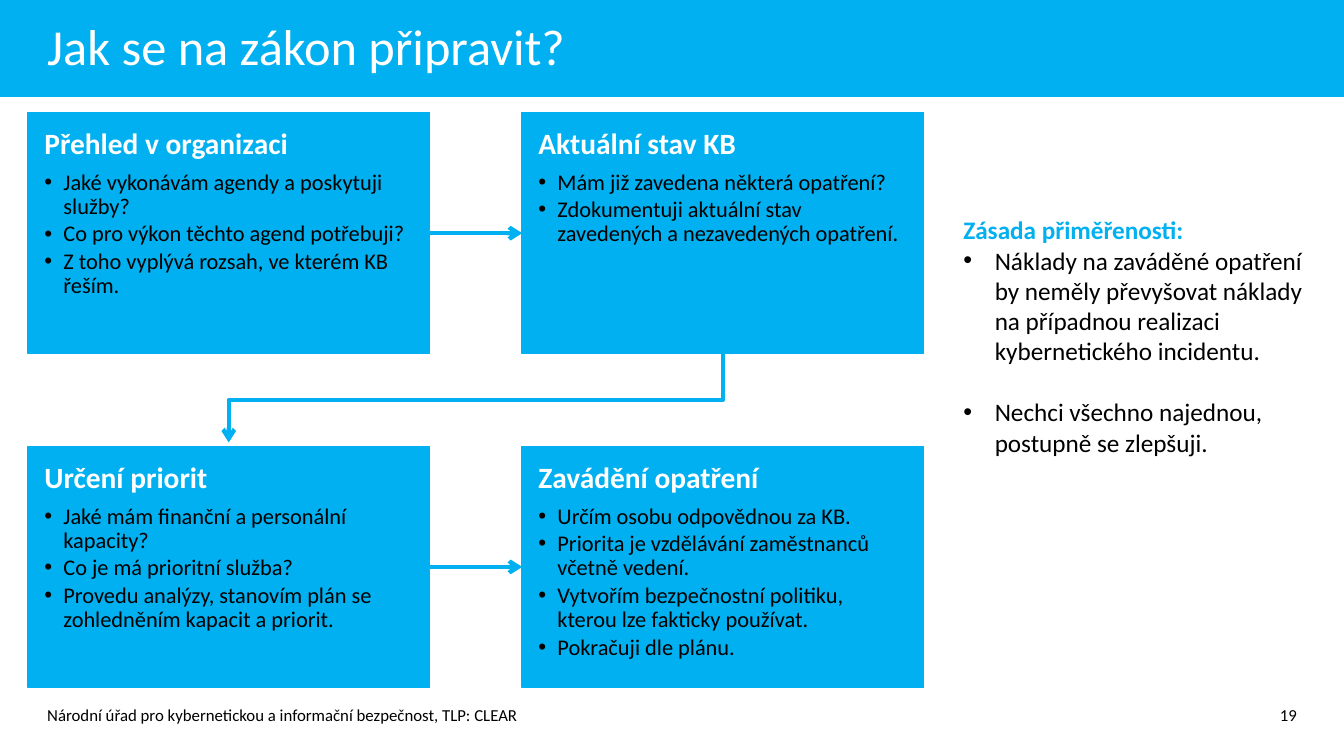
"""Builds the slide on how to prepare for the cybersecurity act."""
from dataclasses import dataclass

from lxml.etree import SubElement
from pptx import Presentation
from pptx.dml.color import RGBColor
from pptx.enum.shapes import MSO_CONNECTOR, MSO_SHAPE
from pptx.enum.text import MSO_ANCHOR, PP_ALIGN
from pptx.oxml.ns import qn
from pptx.util import Cm, Pt


@dataclass(frozen=True)
class Theme:
    font: str = "Calibri"
    blue: RGBColor = RGBColor(0x00, 0xB0, 0xF0)
    white: RGBColor = RGBColor(0xFF, 0xFF, 0xFF)
    black: RGBColor = RGBColor(0x00, 0x00, 0x00)
    title: int = 36
    heading: int = 21
    side: int = 18
    body: int = 16
    footer: int = 12


theme = Theme()


def write(frame, lines, margins=(0.25, 0.13), anchor=MSO_ANCHOR.TOP):
    """Fill a text frame with (text, size, colour, bold, bullet indent, paragraph format) lines."""
    horizontal, vertical = (Cm(margin) for margin in margins)
    frame_format = {"word_wrap": True, "vertical_anchor": anchor,
                    "margin_left": horizontal, "margin_right": horizontal,
                    "margin_top": vertical, "margin_bottom": vertical}
    for name, value in frame_format.items():
        setattr(frame, name, value)
    for index, (text, size, colour, bold, indent, layout) in enumerate(lines):
        para = frame.add_paragraph() if index else frame.paragraphs[0]
        for name, value in {"alignment": PP_ALIGN.LEFT, **layout}.items():
            setattr(para, name, value)
        if indent:
            properties = para._p.get_or_add_pPr()
            properties.set("marL", str(Cm(indent)))
            properties.set("indent", str(-Cm(indent)))
            SubElement(properties, qn("a:buFont"), typeface="Arial")
            SubElement(properties, qn("a:buChar"), char="•")
        span = para.add_run()
        span.text = text
        for name, value in {"name": theme.font, "size": Pt(size), "bold": bold}.items():
            setattr(span.font, name, value)
        span.font.color.rgb = colour


def style_arrow(arrow):
    """Give a line its colour, width, arrowhead and no shadow."""
    arrow.line.color.rgb = theme.blue
    arrow.line.width = Pt(3)
    SubElement(arrow.line._get_or_add_ln(), qn("a:tailEnd"), type="arrow")
    SubElement(arrow._element.spPr, qn("a:effectLst"))


deck = Presentation()
deck.slide_width, deck.slide_height = Cm(33.87), Cm(19.05)
page = deck.slides.add_slide(deck.slide_layouts[6])

band = page.shapes.add_shape(MSO_SHAPE.RECTANGLE, 0, 0, deck.slide_width, Cm(2.44))
band.shadow.inherit = False
band.fill.solid()
band.fill.fore_color.rgb = theme.blue
band.line.fill.background()

labels = [
    ("Jak se na zákon připravit?", (0.94, 0.3, 31.75, 1.7), theme.title, theme.white, PP_ALIGN.LEFT),
    ("Národní úřad pro kybernetickou a informační bezpečnost, TLP: CLEAR",
     (0.94, 17.35, 29.4, 1.32), theme.footer, theme.black, PP_ALIGN.LEFT),
    ("19", (30.53, 17.35, 2.4, 1.32), theme.footer, theme.black, PP_ALIGN.RIGHT),
]
for text, place, size, colour, alignment in labels:
    box = page.shapes.add_textbox(*map(Cm, place))
    write(box.text_frame, [(text, size, colour, False, 0, {"alignment": alignment})],
          anchor=MSO_ANCHOR.MIDDLE)

steps = [
    ("Přehled v organizaci", ["Jaké vykonávám agendy a poskytuji služby?",
                              "Co pro výkon těchto agend potřebuji?",
                              "Z toho vyplývá rozsah, ve kterém KB řeším."]),
    ("Aktuální stav KB", ["Mám již zavedena některá opatření?",
                          "Zdokumentuji aktuální stav zavedených a nezavedených opatření."]),
    ("Určení priorit", ["Jaké mám finanční a personální kapacity?",
                        "Co je má prioritní služba?",
                        "Provedu analýzy, stanovím plán se zohledněním kapacit a priorit."]),
    ("Zavádění opatření", ["Určím osobu odpovědnou za KB.",
                           "Priorita je vzdělávání zaměstnanců včetně vedení.",
                           "Vytvořím bezpečnostní politiku, kterou lze fakticky používat.",
                           "Pokračuji dle plánu."]),
]
heading_layout = {"line_spacing": 0.9, "space_after": Pt(7.35)}
bullet_layout = {"line_spacing": 0.9, "space_after": Pt(2.4)}
cards = []
for index, (heading, bullets) in enumerate(steps):
    row, column = divmod(index, 2)
    card = page.shapes.add_shape(MSO_SHAPE.RECTANGLE, Cm(0.71 + 12.45 * column),
                                 Cm(2.84 + 8.41 * row), Cm(10.11), Cm(6.07))
    card.shadow.inherit = False
    card.fill.solid()
    card.fill.fore_color.rgb = theme.blue
    card.line.color.rgb = theme.blue
    card.line.width = Pt(1)
    lines = [(heading, theme.heading, theme.white, True, 0, heading_layout)]
    lines += [(bullet, theme.body, theme.black, False, 0.48, bullet_layout) for bullet in bullets]
    write(card.text_frame, lines, margins=(0.41, 0.41))
    cards.append(card)

for start, end in (cards[:2], cards[2:]):
    arrow = page.shapes.add_connector(MSO_CONNECTOR.STRAIGHT, 0, 0, 0, 0)
    arrow.begin_connect(start, 3)
    arrow.end_connect(end, 1)
    style_arrow(arrow)

upper, lower = cards[1], cards[2]
from_x = upper.left + upper.width // 2
to_x = lower.left + lower.width // 2
bottom = upper.top + upper.height
middle = (bottom + lower.top) // 2
builder = page.shapes.build_freeform(from_x, bottom)
builder.add_line_segments([(from_x, middle), (to_x, middle), (to_x, lower.top - Cm(0.1))], close=False)
bend = builder.convert_to_shape()
bend.fill.background()
style_arrow(bend)

principle = page.shapes.add_textbox(Cm(24.03), Cm(5.28), Cm(9.12), Cm(7.7))
write(principle.text_frame, [
    ("Zásada přiměřenosti:", theme.side, theme.blue, True, 0, {}),
    ("Náklady na zaváděné opatření by neměly převyšovat náklady na případnou realizaci "
     "kybernetického incidentu.", theme.side, theme.black, False, 0.79, {}),
    ("Nechci všechno najednou, postupně se zlepšuji.", theme.side, theme.black, False, 0.79,
     {"space_before": Pt(22)}),
])

deck.save("out.pptx")
